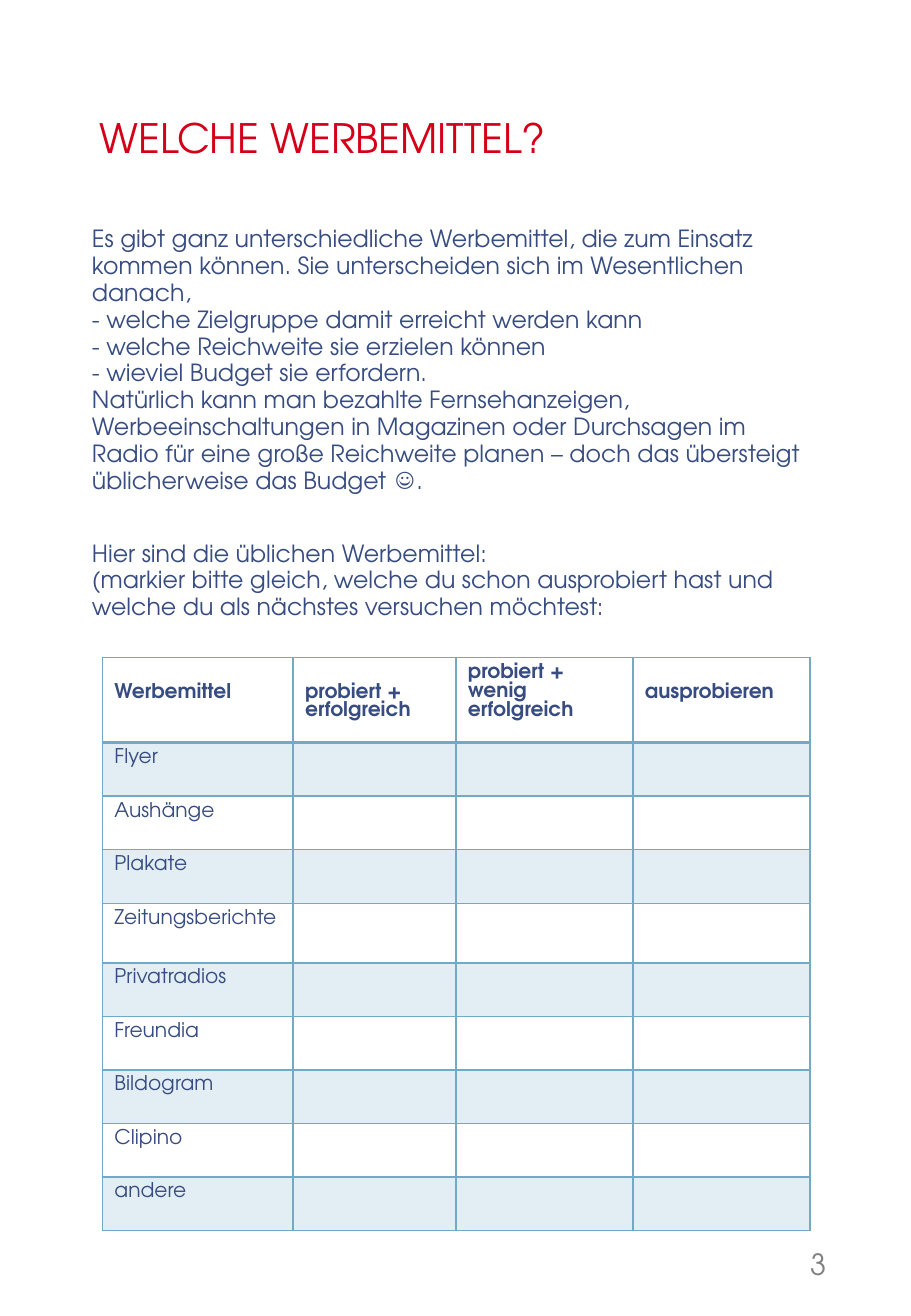
from pptx import Presentation
from pptx.dml.color import RGBColor as Rgb
from pptx.enum.shapes import MSO_SHAPE as Shape
from pptx.enum.text import MSO_ANCHOR as Anchor, PP_ALIGN as Align
from pptx.oxml import parse_xml as to_xml
from pptx.oxml.ns import nsdecls as decls, qn
from pptx.util import Inches, Pt

WIDE, HIGH = Inches(7.5), Inches(10.83)

THEME = {
    "font": "TeX Gyre Adventor", "white": "FFFFFF",
    "red": "D40018", "navy": "374C81", "gray": "808080", "sky": "70AAC4",
    "title": 24, "body": 14, "cell": 12, "page": 17.3,
    "tint": 20, "thin": 1, "thick": 2,
}

TITLE = "WELCHE WERBEMITTEL?"
INTRO = [
    "Es gibt ganz unterschiedliche Werbemittel, die zum Einsatz kommen "
    "können. Sie unterscheiden sich im Wesentlichen danach,",
    "- welche Zielgruppe damit erreicht werden kann",
    "- welche Reichweite sie erzielen können",
    "- wieviel Budget sie erfordern.",
    "Natürlich kann man bezahlte Fernsehanzeigen, Werbeeinschaltungen in "
    "Magazinen oder Durchsagen im Radio für eine große Reichweite planen – "
    "doch das übersteigt üblicherweise das Budget ☺.",
]
TASK = [
    "Hier sind die üblichen Werbemittel:",
    "(markier bitte gleich, welche du schon ausprobiert hast und welche du "
    "als nächstes versuchen möchtest:",
]
HEADS = ["Werbemittel", "probiert + erfolgreich",
         "probiert + wenig erfolgreich", "ausprobieren"]
MEDIA = ["Flyer", "Aushänge", "Plakate", "Zeitungsberichte", "Privatradios",
         "Freundia", "Bildogram", "Clipino", "andere"]

# Column widths and row heights as percent of the slide
COLS = [20.93, 17.87, 19.43, 19.43]
ROWS = [6.28] + [4.53 if name == "Zeitungsberichte" else 4.07
                 for name in MEDIA]


def across(share):
    """Percent of the slide's width."""
    return round(WIDE * share / 100)


def down(share):
    """Percent of the slide's height."""
    return round(HIGH * share / 100)


def apply(target, form):
    for name, value in form.items():
        setattr(target, name, value)


def style(para, size, tone, bold=False, **form):
    """Format one paragraph and its runs."""
    apply(para, form)
    for font in [para.font] + [run.font for run in para.runs]:
        apply(font, {"name": THEME["font"], "size": Pt(THEME[size]),
                     "bold": bold})
        font.color.rgb = Rgb.from_string(THEME[tone])


def add_panel(slide, x, y, w, h):
    """Add the plain sheet behind the content."""
    panel = slide.shapes.add_shape(Shape.RECTANGLE, across(x), down(y),
                                   across(w), down(h))
    panel.shadow.inherit = False
    panel.fill.solid()
    panel.fill.fore_color.rgb = Rgb.from_string(THEME["white"])
    panel.line.fill.background()


def add_text(slide, area, groups, size, tone, anchor=Anchor.TOP, **form):
    """Add a text box; a gap parts each group of lines from the next."""
    x, y, w, h = area
    box = slide.shapes.add_textbox(across(x), down(y), across(w), down(h))
    frame = box.text_frame
    side, edge = across(1.73), down(0.65)
    apply(frame, {"word_wrap": True, "vertical_anchor": anchor,
                  "margin_left": side, "margin_right": side,
                  "margin_top": edge, "margin_bottom": edge})
    for g, lines in enumerate(groups):
        for n, line in enumerate(lines):
            first = g == n == 0
            para = frame.paragraphs[0] if first else frame.add_paragraph()
            para.text = line
            gap = Pt(26.9 if g and not n else 0)
            style(para, size, tone, space_before=gap, **form)


def add_lines(cell, sides):
    """Draw the borders of a cell; sides maps a side to its weight."""
    props = cell._tc.get_or_add_tcPr()
    for n, (side, weight) in enumerate(sides.items()):
        props.insert(n, to_xml(
            f'<a:ln{side} {decls("a")} w="{Pt(THEME[weight])}">'
            f'<a:solidFill><a:srgbClr val="{THEME["sky"]}"/></a:solidFill>'
            f'</a:ln{side}>'))


def add_tint(cell):
    """Fill a cell with the see-through band colour."""
    cell.fill.solid()
    cell.fill.fore_color.rgb = Rgb.from_string(THEME["sky"])
    for tone in cell._tc.tcPr.iter(qn("a:srgbClr")):
        tone.append(to_xml(
            f'<a:alpha {decls("a")} val="{THEME["tint"] * 1000}"/>'))


def add_cell(cell, text, row, drop):
    """Fill in one cell; drop lowers its text by one line."""
    edge = down(0.46)
    apply(cell, {"text": text, "vertical_anchor": Anchor.TOP,
                 "margin_left": across(1.33), "margin_right": across(1.33),
                 "margin_top": edge + (down(1.48) if drop else 0),
                 "margin_bottom": edge})
    style(cell.text_frame.paragraphs[0], "cell", "navy", bold=row == 0)
    if row % 2:
        add_tint(cell)
    else:
        cell.fill.background()
    add_lines(cell, {"L": "thin", "R": "thin",
                     "T": "thick" if row == 1 else "thin",
                     "B": "thick" if row == 0 else "thin"})


def add_grid(slide, x, y):
    """Add the checklist table."""
    grid = slide.shapes.add_table(
        len(ROWS), len(COLS), across(x), down(y),
        across(sum(COLS)), down(sum(ROWS))).table
    apply(grid, {"first_row": False, "horz_banding": False})
    for col, share in zip(grid.columns, COLS):
        col.width = across(share)
    for row, share in zip(grid.rows, ROWS):
        row.height = down(share)
    blank = [""] * (len(COLS) - 1)
    for r, texts in enumerate([HEADS] + [[name] + blank for name in MEDIA]):
        for c, text in enumerate(texts):
            add_cell(grid.cell(r, c), text, r, drop=r == 0 and c != 2)


def main():
    deck = Presentation()
    apply(deck, {"slide_width": WIDE, "slide_height": HIGH})
    slide = deck.slides.add_slide(deck.slide_layouts[6])

    # Sheet
    add_panel(slide, 2.53, 0, 94.93, 100)

    # Heading and running text
    add_text(slide, (9.2, 1.11, 83.33, 11.82), [[TITLE]], "title", "red",
             Anchor.BOTTOM, line_spacing=0.85)
    add_text(slide, (8.36, 16.5, 83.33, 36), [INTRO, TASK], "body", "navy",
             line_spacing=0.95)

    # Checklist
    add_grid(slide, 11.24, 49.97)

    # Page number
    add_text(slide, (83.4, 93.3, 9.07, 4.71), [["3"]], "page", "gray",
             Anchor.BOTTOM, alignment=Align.RIGHT)

    deck.save("out.pptx")


if __name__ == "__main__":
    main()
